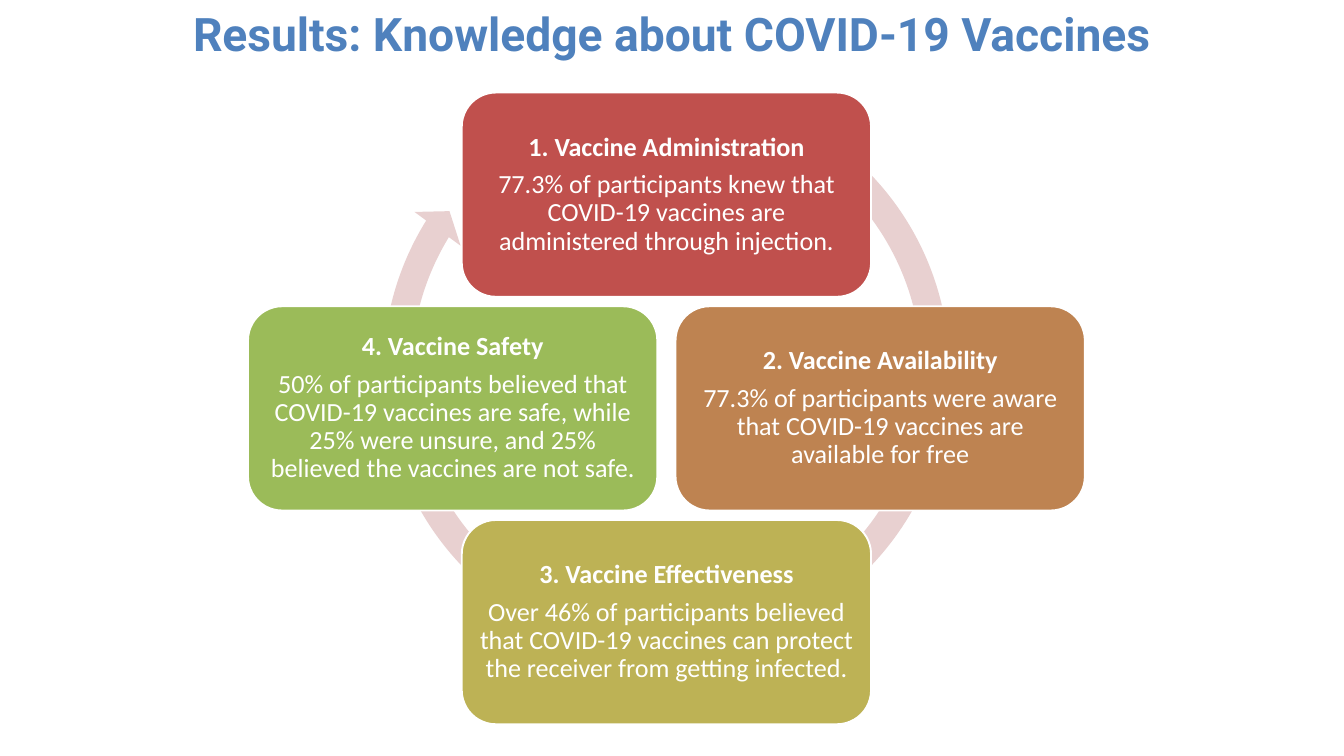
"""Build a slide showing four vaccine knowledge results as a cycle."""
from pptx import Presentation
from pptx import util as u
from pptx.dml.color import RGBColor
from pptx.enum import shapes, text

COLORS = {
    "title": "4F81BD",
    "ring": "E8D0D0",
    "white": "FFFFFF",
    "red": "C0504D",
    "orange": "BE8351",
    "olive": "BDB255",
    "green": "9BBB59",
}
TITLE = "Results: Knowledge about COVID-19 Vaccines"
RESULTS = [
    ("1. Vaccine Administration",
     "77.3% of participants knew that COVID-19 vaccines are administered through injection.",
     "red", (0, -1)),
    ("2. Vaccine Availability",
     "77.3% of participants were aware that COVID-19 vaccines are available for free",
     "orange", (1, 0)),
    ("3. Vaccine Effectiveness",
     "Over 46% of participants believed that COVID-19 vaccines can protect "
     "the receiver from getting infected.",
     "olive", (0, 1)),
    ("4. Vaccine Safety",
     "50% of participants believed that COVID-19 vaccines are safe, while 25% were unsure, "
     "and 25% believed the vaccines are not safe.",
     "green", (-1, 0)),
]
CENTER_X, CENTER_Y, STEP = 25.19, 15.44, 8.08
CARD_WIDTH, CARD_HEIGHT, CARD_INSET = 15.47, 7.72, 0.3
RING_SIZE, RING_CENTER_Y = 22.5, 14
RING_ADJUSTMENTS = (0.047, 2.729, 127.034, 181.19, 0.048)


def color(name):
    return RGBColor.from_string(COLORS[name])


def add_paragraph(frame, first, words, font, size, tint, bold):
    para = frame.paragraphs[0] if first else frame.add_paragraph()
    para.alignment = text.PP_ALIGN.CENTER
    para.line_spacing = 0.9
    span = para.add_run()
    span.text = words
    span.font.name = font
    span.font.size = u.Pt(size)
    span.font.bold = bold
    span.font.color.rgb = color(tint)
    return para


def add_filled_shape(page, kind, center_x, center_y, width, height, fill):
    shape = page.shapes.add_shape(
        kind, u.Cm(center_x - width / 2), u.Cm(center_y - height / 2),
        u.Cm(width), u.Cm(height))
    shape.shadow.inherit = False
    shape.fill.solid()
    shape.fill.fore_color.rgb = color(fill)
    return shape


def add_title(page):
    box = page.shapes.add_textbox(u.Cm(3.48), u.Cm(0.4), u.Cm(43.82), u.Cm(2))
    frame = box.text_frame
    frame.word_wrap = True
    frame.vertical_anchor = text.MSO_ANCHOR.MIDDLE
    add_paragraph(frame, True, TITLE, "Roboto", 49.5, "title", True)


def add_ring(page):
    ring = add_filled_shape(page, shapes.MSO_SHAPE.CIRCULAR_ARROW, CENTER_X,
                            RING_CENTER_Y, RING_SIZE, RING_SIZE, "ring")
    ring.line.fill.background()
    for index, value in enumerate(RING_ADJUSTMENTS):
        ring.adjustments[index] = value


def add_card(page, heading, body, fill, direction):
    across, down = direction
    card = add_filled_shape(page, shapes.MSO_SHAPE.ROUNDED_RECTANGLE,
                            CENTER_X + across * STEP, CENTER_Y + down * STEP,
                            CARD_WIDTH, CARD_HEIGHT, fill)
    card.line.color.rgb = color("white")
    card.line.width = u.Pt(2)
    frame = card.text_frame
    frame.word_wrap = True
    frame.vertical_anchor = text.MSO_ANCHOR.MIDDLE
    frame.margin_left = frame.margin_right = u.Cm(CARD_INSET)
    frame.margin_top = frame.margin_bottom = u.Cm(CARD_INSET)
    for words, is_heading in ((heading, True), (body, False)):
        para = add_paragraph(frame, is_heading, words, "Calibri", 28, "white", is_heading)
        para.space_after = u.Pt(9.8)


def main():
    deck = Presentation()
    deck.slide_width, deck.slide_height = u.Cm(50.8), u.Cm(28.58)
    page = deck.slides.add_slide(deck.slide_layouts[6])
    add_title(page)
    add_ring(page)
    for result in RESULTS:
        add_card(page, *result)
    deck.save("out.pptx")


if __name__ == "__main__":
    main()
